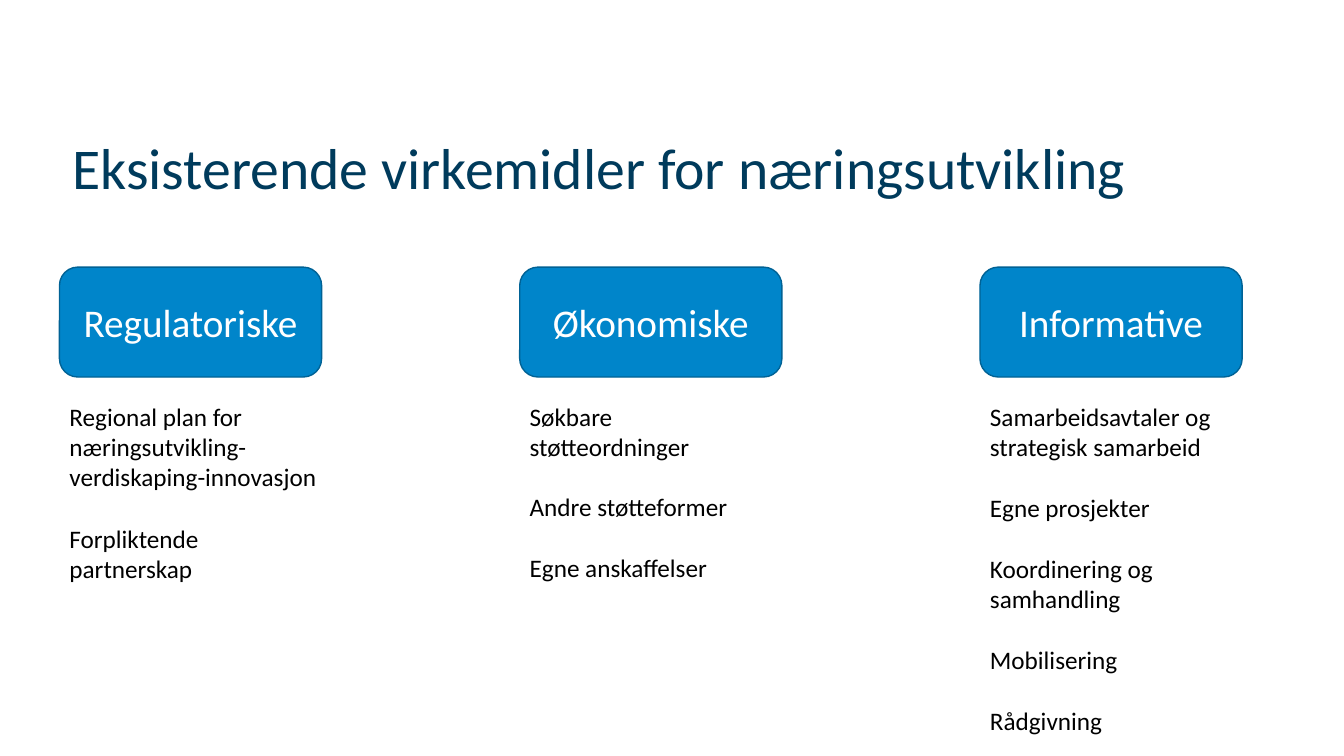
from pptx import Presentation
from pptx.dml.color import RGBColor
from pptx.enum.shapes import MSO_SHAPE
from pptx.enum.text import MSO_ANCHOR, PP_ALIGN
from pptx.util import Inches, Pt

TITLE = "Eksisterende virkemidler for næringsutvikling"
INSTRUMENTS = [
    ("Regulatoriske", 2.75, [
        (3.93, 1.01, ["Regional plan for næringsutvikling-verdiskaping-innovasjon"]),
        (5.14, 0.71, ["Forpliktende partnerskap"]),
    ]),
    ("Økonomiske", 2.6, [
        (3.93, 0.71, ["Søkbare støtteordninger"]),
        (4.82, 1.01, ["Andre støtteformer", "Egne anskaffelser"]),
    ]),
    ("Informative", 2.6, [
        (3.93, 3.43, [
            "Samarbeidsavtaler og strategisk samarbeid",
            "Egne prosjekter",
            "Koordinering og samhandling",
            "Mobilisering",
            "Rådgivning",
        ]),
    ]),
]

NAVY = RGBColor(0x00, 0x3B, 0x5C)
BLUE = RGBColor(0x00, 0x85, 0xCA)
BLUE_EDGE = RGBColor(0x00, 0x62, 0x95)
WHITE = RGBColor(0xFF, 0xFF, 0xFF)
BLACK = RGBColor(0x00, 0x00, 0x00)
ROUNDED = MSO_SHAPE.ROUNDED_RECTANGLE
TOP, MIDDLE = MSO_ANCHOR.TOP, MSO_ANCHOR.MIDDLE
LEFT, CENTER = PP_ALIGN.LEFT, PP_ALIGN.CENTER

FIRST_LEFT, LAST_LEFT = 0.59, 9.72
PITCH = (LAST_LEFT - FIRST_LEFT) / (len(INSTRUMENTS) - 1)
HEADING_TOP, HEADING_WIDTH, HEADING_HEIGHT = 2.65, 2.6, 1.09
ITEM_GAP = 22


def write(shape, lines, *, size, color, align=LEFT, anchor=TOP, gap=0):
    frame = shape.text_frame
    frame.word_wrap = True
    frame.vertical_anchor = anchor
    for index, line in enumerate(lines):
        paragraph = frame.add_paragraph() if index else frame.paragraphs[0]
        paragraph.alignment = align
        if index:
            paragraph.space_before = Pt(gap)
        run = paragraph.add_run()
        run.text = line
        run.font.name = "Calibri"
        run.font.size = Pt(size)
        run.font.color.rgb = color


prs = Presentation()
prs.slide_width, prs.slide_height = Inches(13.33), Inches(7.5)
slide = prs.slides.add_slide(prs.slide_layouts[6])
shapes = slide.shapes

title = shapes.add_textbox(Inches(0.62), Inches(1.1), Inches(11.5), Inches(1.1))
write(title, [TITLE], size=41.2, color=NAVY, anchor=MIDDLE)

for column, (name, width, blocks) in enumerate(INSTRUMENTS):
    left = Inches(FIRST_LEFT + column * PITCH)
    heading = shapes.add_shape(ROUNDED, left, Inches(HEADING_TOP),
                               Inches(HEADING_WIDTH), Inches(HEADING_HEIGHT))
    heading.shadow.inherit = False
    heading.fill.solid()
    heading.fill.fore_color.rgb = BLUE
    heading.line.color.rgb = BLUE_EDGE
    heading.line.width = Pt(1)
    write(heading, [name], size=28, color=WHITE, align=CENTER, anchor=MIDDLE)
    for top, height, items in blocks:
        measures = shapes.add_textbox(left, Inches(top), Inches(width), Inches(height))
        write(measures, items, size=18, color=BLACK, gap=ITEM_GAP)

prs.save("out.pptx")
